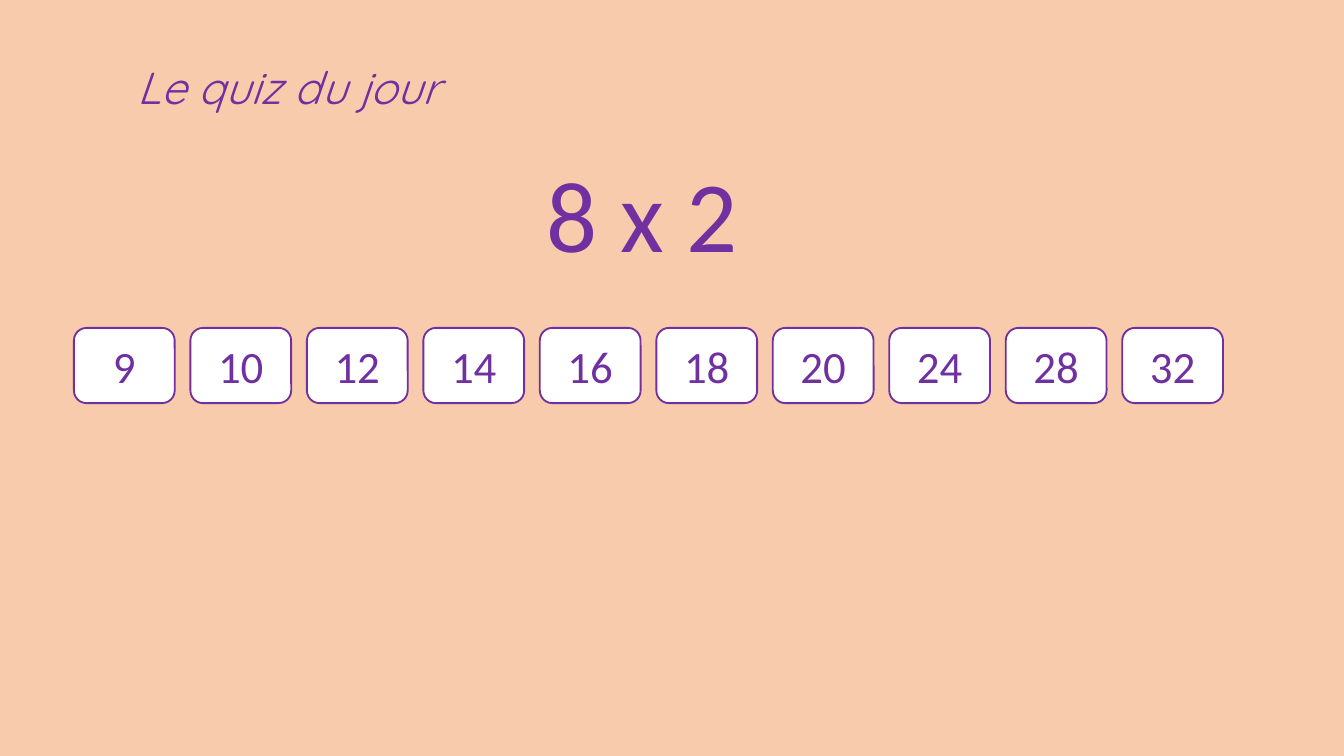
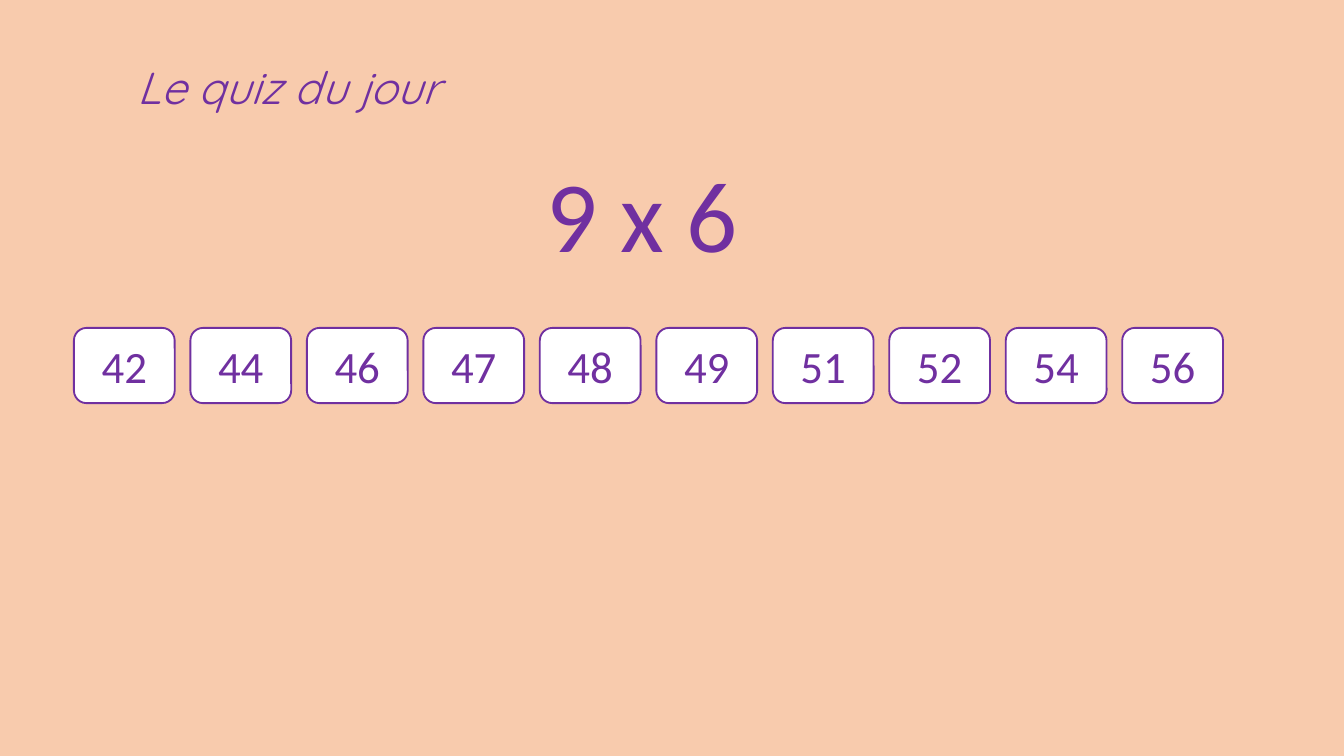
"""Build two multiplication quiz slides, each with ten possible answers."""
from dataclasses import dataclass

from pptx import Presentation
from pptx.dml.color import RGBColor
from pptx.enum.shapes import MSO_SHAPE
from pptx.enum.text import MSO_ANCHOR, MSO_AUTO_SIZE, PP_ALIGN
from pptx.util import Pt

ROUNDED = MSO_SHAPE.ROUNDED_RECTANGLE
TOP, MIDDLE = MSO_ANCHOR.TOP, MSO_ANCHOR.MIDDLE
LEFT, CENTER = PP_ALIGN.LEFT, PP_ALIGN.CENTER
NO_FIT, GROW = MSO_AUTO_SIZE.NONE, MSO_AUTO_SIZE.SHAPE_TO_FIT_TEXT
TITLE_ONLY = 5


@dataclass(frozen=True)
class Theme:
    peach: RGBColor = RGBColor(0xF8, 0xCB, 0xAD)
    purple: RGBColor = RGBColor(0x70, 0x30, 0xA0)
    white: RGBColor = RGBColor(0xFF, 0xFF, 0xFF)
    title_font: str = "Quicksand"
    body_font: str = "Calibri"
    text_size: int = 24
    question_size: int = 54


THEME = Theme()
ANSWER_LEFT, ANSWER_TOP = 39.6, 175.7
ANSWER_WIDTH, ANSWER_HEIGHT = 54, 40.3
ANSWER_PITCH = 62.4

QUIZZES = [
    ("8 x 2 ", [9, 10, 12, 14, 16, 18, 20, 24, 28, 32]),
    ("9 x 6 ", [42, 44, 46, 47, 48, 49, 51, 52, 54, 56]),
]


def write(sp, text, font=THEME.body_font, size=THEME.text_size, italic=False,
          align=CENTER, anchor=TOP, fit=NO_FIT, spacing=1.0):
    tf = sp.text_frame
    tf.word_wrap = True
    tf.auto_size = fit
    tf.vertical_anchor = anchor
    p = tf.paragraphs[0]
    p.alignment = align
    p.line_spacing = spacing
    r = p.add_run()
    r.text = text
    r.font.name = font
    r.font.size = Pt(size)
    r.font.italic = italic
    r.font.color.rgb = THEME.purple


prs = Presentation()
prs.slide_width, prs.slide_height = Pt(720), Pt(405)
background = prs.slide_master.background.fill
background.solid()
background.fore_color.rgb = THEME.peach

for question, answers in QUIZZES:
    s = prs.slides.add_slide(prs.slide_layouts[TITLE_ONLY])

    title = s.shapes.title
    title.left, title.top = Pt(66.2), Pt(31.7)
    title.width, title.height = Pt(302.4), Pt(37.4)
    write(title, "Le quiz du jour", font=THEME.title_font, italic=True,
          align=LEFT, spacing=0.9)

    box = s.shapes.add_textbox(Pt(280), Pt(77.8), Pt(140.4), Pt(72.7))
    write(box, question, size=THEME.question_size, fit=GROW)

    for i, answer in enumerate(answers):
        sp = s.shapes.add_shape(
            ROUNDED, Pt(ANSWER_LEFT + i * ANSWER_PITCH), Pt(ANSWER_TOP),
            Pt(ANSWER_WIDTH), Pt(ANSWER_HEIGHT))
        sp.shadow.inherit = False
        sp.fill.solid()
        sp.fill.fore_color.rgb = THEME.white
        sp.line.color.rgb = THEME.purple
        sp.line.width = Pt(1)
        write(sp, str(answer), anchor=MIDDLE)

prs.save("out.pptx")
